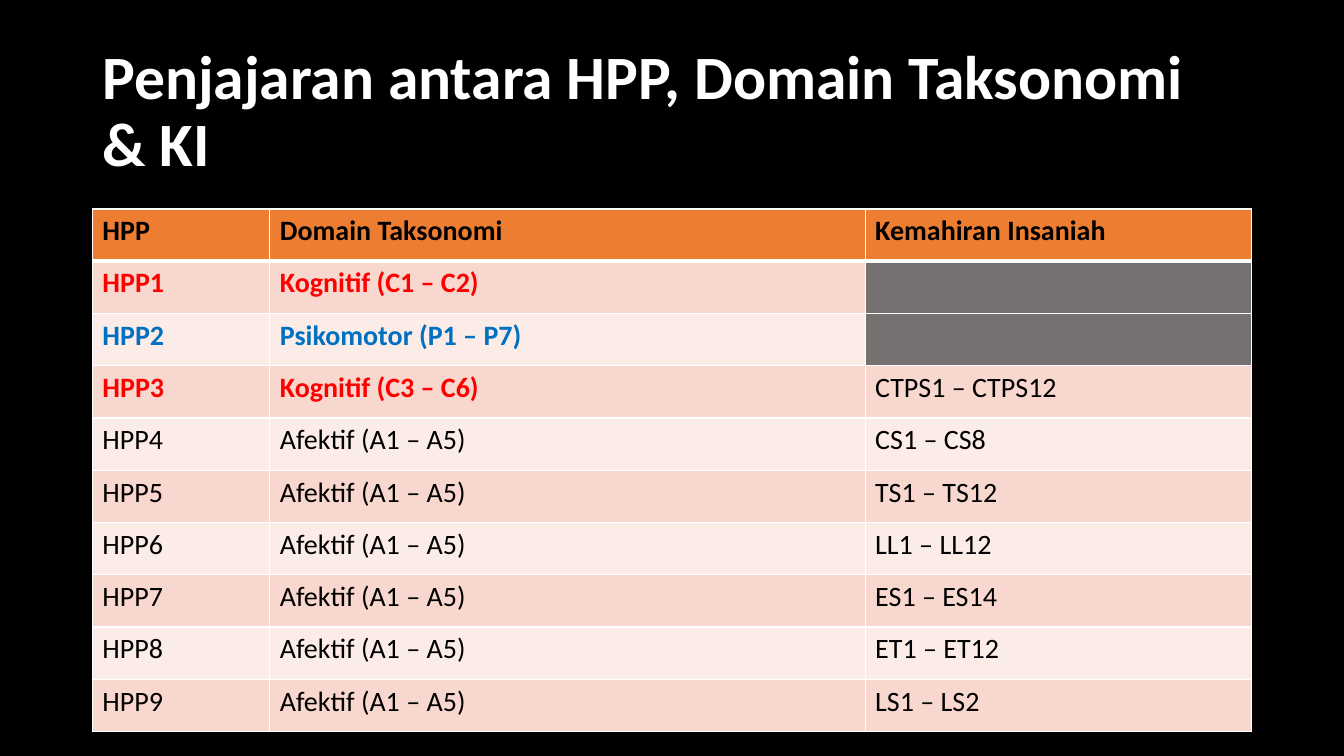
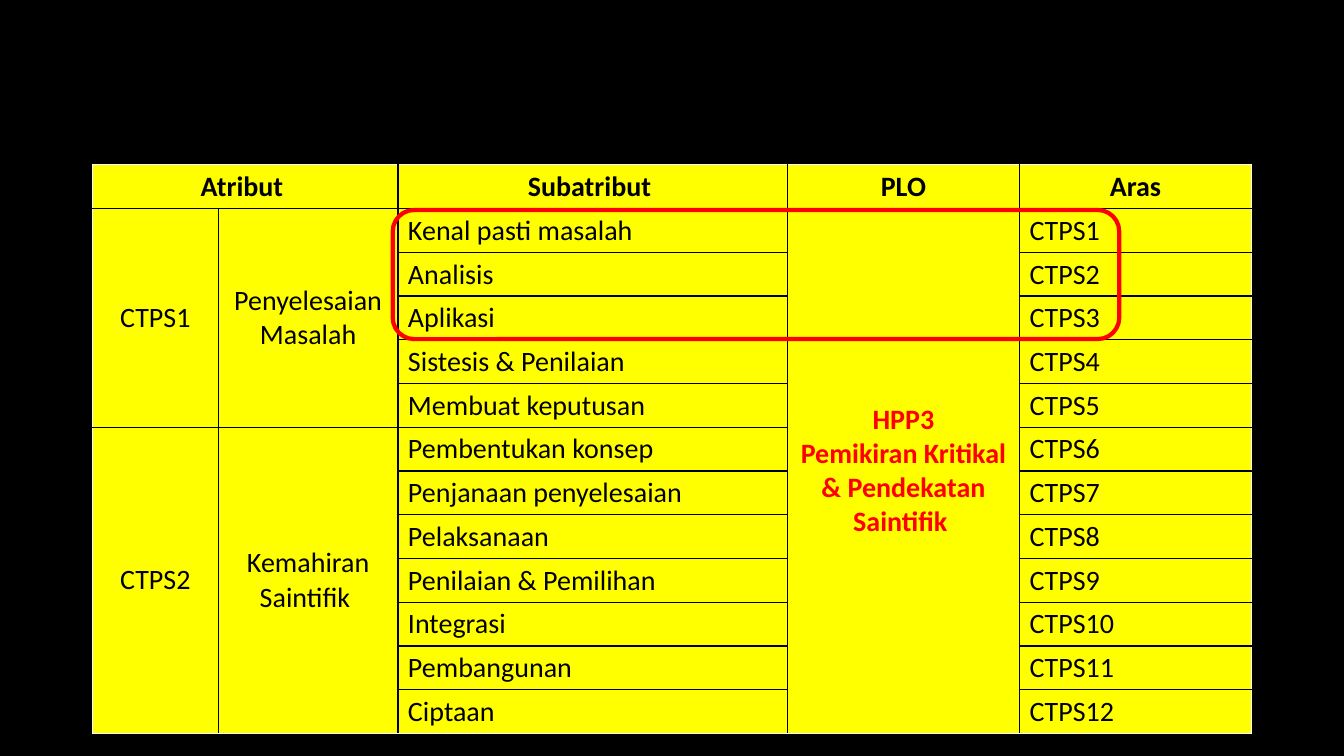
from lxml.etree import SubElement
from pptx import Presentation
from pptx.dml.color import RGBColor
from pptx.enum.shapes import MSO_SHAPE
from pptx.enum.text import MSO_ANCHOR, PP_ALIGN
from pptx.oxml.ns import qn
from pptx.util import Pt

PX = 9525
LEFT, WIDTH = 88, 1104
FONT = "Calibri"
BLACK = RGBColor(0x00, 0x00, 0x00)
WHITE = RGBColor(0xFF, 0xFF, 0xFF)
RED = RGBColor(0xFF, 0x00, 0x00)
BLUE = RGBColor(0x00, 0x70, 0xC0)
ORANGE = RGBColor(0xED, 0x7D, 0x31)
PINK = RGBColor(0xF8, 0xD7, 0xCE)
PALE = RGBColor(0xFC, 0xEC, 0xE8)
GREY = RGBColor(0x76, 0x71, 0x71)
YELLOW = RGBColor(0xFF, 0xFF, 0x00)


def add_grid(slide, top, height, widths, rows):
    frame = slide.shapes.add_table(len(rows), len(widths), LEFT * PX, top * PX,
                                   WIDTH * PX, height * PX)
    table = frame.table
    for col, width in zip(table.columns, widths):
        col.width = width * PX
    for r, row in enumerate(rows):
        table.rows[r].height = height * PX // len(rows)
        for c, text in enumerate(row):
            table.cell(r, c).text_frame.text = text
    return table


def style_cell(cell, fill, color, bold, align, edges):
    props = cell._tc.get_or_add_tcPr()
    for side, (shade, width) in zip("LRTB", edges):
        line = SubElement(props, qn(f"a:ln{side}"), w=str(Pt(width)))
        solid = SubElement(line, qn("a:solidFill"))
        SubElement(solid, qn("a:srgbClr"), val=str(shade))
    cell.fill.solid()
    cell.fill.fore_color.rgb = fill
    for para in cell.text_frame.paragraphs:
        para.alignment = align
        for run in para.runs:
            run.font.name = FONT
            run.font.size = Pt(20)
            run.font.bold = bold
            run.font.color.rgb = color


deck = Presentation()
deck.slide_width = 1280 * PX
deck.slide_height = 720 * PX
slides = []
for _ in range(2):
    slide = deck.slides.add_slide(deck.slide_layouts[6])
    slide.background.fill.solid()
    slide.background.fill.fore_color.rgb = BLACK
    slides.append(slide)
first, second = slides

title = first.shapes.add_textbox(LEFT * PX, 38 * PX, WIDTH * PX, 139 * PX)
frame = title.text_frame
frame.word_wrap = True
frame.vertical_anchor = MSO_ANCHOR.MIDDLE
frame.text = "Penjajaran antara HPP, Domain Taksonomi & KI"
para = frame.paragraphs[0]
para.line_spacing = 0.9
font = para.runs[0].font
font.name = FONT
font.size = Pt(44)
font.bold = True
font.color.rgb = WHITE

domains = ["Kognitif (C1 – C2)", "Psikomotor (P1 – P7)", "Kognitif (C3 – C6)"]
domains += ["Afektif (A1 – A5)"] * 6
skills = ["", "", "CTPS1 – CTPS12", "CS1 – CS8", "TS1 – TS12", "LL1 – LL12",
          "ES1 – ES14", "ET1 – ET12", "LS1 – LS2"]
rows = [("HPP", "Domain Taksonomi", "Kemahiran Insaniah")]
rows += [(f"HPP{n}", *pair) for n, pair in enumerate(zip(domains, skills), 1)]
table = add_grid(first, 199, 498, (169, 567, 368), rows)
accents = {1: RED, 2: BLUE, 3: RED}
thin, thick = (WHITE, 1), (WHITE, 3)
for r, row in enumerate(rows):
    for c, text in enumerate(row):
        fill = ORANGE if r == 0 else PINK if r % 2 else PALE
        if not text:
            fill = GREY
        accent = r in accents and c < 2
        edges = (thin, thin, thick if r == 1 else thin, thick if r == 0 else thin)
        style_cell(table.cell(r, c), fill, accents[r] if accent else BLACK,
                   r == 0 or accent, PP_ALIGN.LEFT, edges)

parts = ["Kenal pasti masalah", "Analisis", "Aplikasi", "Sistesis & Penilaian",
         "Membuat keputusan", "Pembentukan konsep", "Penjanaan penyelesaian",
         "Pelaksanaan", "Penilaian & Pemilihan", "Integrasi", "Pembangunan", "Ciptaan"]
rows = [("Atribut ", "", "Subatribut ", "PLO", "Aras")]
rows += [("", "", part, "", f"CTPS{n}") for n, part in enumerate(parts, 1)]
table = add_grid(second, 157, 540, (120, 171, 371, 221, 221), rows)
table.cell(0, 0).merge(table.cell(0, 1))
groups = [
    (1, 0, 5, "CTPS1"),
    (1, 1, 5, "Penyelesaian\nMasalah"),
    (6, 0, 12, "CTPS2"),
    (6, 1, 12, "Kemahiran Saintifik "),
    (1, 3, 12, "HPP3\nPemikiran Kritikal & Pendekatan Saintifik "),
]
for top, col, last, text in groups:
    cell = table.cell(top, col)
    cell.merge(table.cell(last, col))
    cell.text_frame.text = text
    cell.vertical_anchor = MSO_ANCHOR.MIDDLE
for r in range(len(rows)):
    for c in range(5):
        cell = table.cell(r, c)
        outer = (c == 0, c == 4, r == 0, r + cell.span_height == len(rows))
        edges = [(WHITE if out else BLACK, 1) for out in outer]
        plo = r > 0 and c == 3
        align = PP_ALIGN.LEFT if r > 0 and c in (2, 4) else PP_ALIGN.CENTER
        style_cell(cell, YELLOW, RED if plo else BLACK, r == 0 or plo, align, edges)

ring = second.shapes.add_shape(MSO_SHAPE.ROUNDED_RECTANGLE, 374 * PX, 200 * PX,
                               692 * PX, 123 * PX)
ring.shadow.inherit = False
ring.fill.background()
ring.line.color.rgb = RED
ring.line.width = Pt(3)

deck.save("out.pptx")
